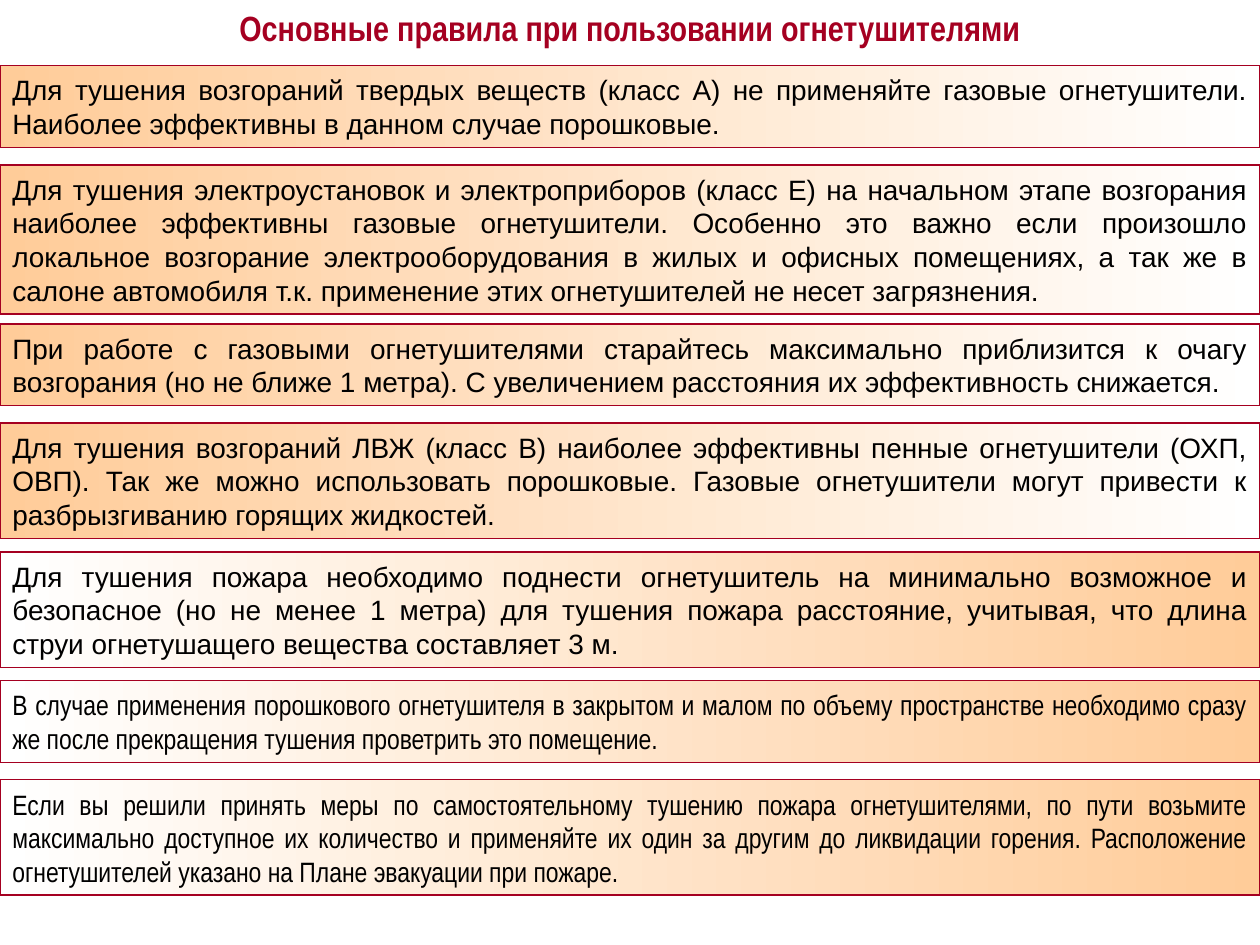
from pptx import Presentation
from pptx.dml.color import RGBColor
from pptx.enum.shapes import MSO_SHAPE as Shape
from pptx.enum.text import MSO_ANCHOR as Anchor, MSO_AUTO_SIZE as Fit, PP_ALIGN as Align
from pptx.util import Cm, Pt

WIDE, HIGH = 25.4, 19.05
RED, PEACH, WHITE, BLACK = "A50021", "FFCC99", "FFFFFF", "000000"
SANS, SLIM = "Arial", "Arial Narrow"
OUT, BACK = (PEACH, WHITE), (WHITE, PEACH)

# Each rule: top in cm, count of lines, gradient, font, wording
RULES = [
    (1.32, 2, OUT, SANS,
     "Для тушения возгораний твердых веществ (класс А) не применяйте газовые "
     "огнетушители. Наиболее эффективны в данном случае порошковые."),
    (3.33, 4, OUT, SANS,
     "Для тушения электроустановок и электроприборов (класс Е) на начальном этапе "
     "возгорания наиболее эффективны газовые огнетушители. Особенно это важно если "
     "произошло локальное возгорание электрооборудования в жилых и офисных "
     "помещениях, а так же в салоне автомобиля т.к. применение этих огнетушителей "
     "не несет загрязнения."),
    (6.53, 2, OUT, SANS,
     "При работе с газовыми огнетушителями старайтесь максимально приблизится к "
     "очагу возгорания (но не ближе 1 метра). С увеличением расстояния их "
     "эффективность снижается."),
    (8.53, 3, OUT, SANS,
     "Для тушения возгораний ЛВЖ (класс В) наиболее эффективны пенные огнетушители "
     "(ОХП, ОВП). Так же можно использовать порошковые. Газовые огнетушители могут "
     "привести к разбрызгиванию горящих жидкостей."),
    (11.13, 3, BACK, SANS,
     "Для тушения пожара необходимо поднести огнетушитель на минимально возможное "
     "и безопасное (но не менее 1 метра) для тушения пожара расстояние, учитывая, "
     "что длина струи огнетушащего вещества составляет 3 м. "),
    (13.72, 2, BACK, SLIM,
     "В случае применения порошкового огнетушителя в закрытом и малом по объему "
     "пространстве необходимо сразу же после прекращения тушения проветрить это "
     "помещение."),
    (15.72, 3, BACK, SLIM,
     "Если вы решили принять меры по самостоятельному тушению пожара "
     "огнетушителями, по пути возьмите максимально доступное их количество и "
     "применяйте их один за другим до ликвидации горения. Расположение "
     "огнетушителей указано на Плане эвакуации при пожаре."),
]


def color(code):
    return RGBColor.from_string(code)


def write(shape, text, face, size, tint, align, bold=False):
    frame = shape.text_frame
    frame.word_wrap = True
    frame.auto_size = Fit.SHAPE_TO_FIT_TEXT
    par = frame.paragraphs[0]
    par.alignment = align
    run = par.add_run()
    run.text = text
    font = run.font
    font.name, font.size, font.bold = face, Pt(size), bold
    font.color.rgb = color(tint)


def add_title(slide, text):
    box = slide.shapes.add_textbox(0, 0, Cm(WIDE), Cm(1.1))
    write(box, text, SLIM, 20, RED, Align.CENTER, bold=True)


def add_rule(slide, top, lines, shade, face, text):
    high = 0.3 + 0.675 * lines
    box = slide.shapes.add_shape(Shape.RECTANGLE, 0, Cm(top), Cm(WIDE), Cm(high))
    box.shadow.inherit = False
    box.fill.gradient()
    box.fill.gradient_angle = 0
    for stop, code in zip(box.fill.gradient_stops, shade):
        stop.color.rgb = color(code)
    box.line.color.rgb = color(RED)
    box.line.width = Pt(0.75)
    box.text_frame.vertical_anchor = Anchor.MIDDLE
    write(box, text, face, 16, BLACK, Align.JUSTIFY)


def main():
    deck = Presentation()
    deck.slide_width, deck.slide_height = Cm(WIDE), Cm(HIGH)
    slide = deck.slides.add_slide(deck.slide_layouts[6])

    # Heading
    add_title(slide, "Основные правила при пользовании огнетушителями")

    # Rules from top to bottom
    for rule in RULES:
        add_rule(slide, *rule)

    deck.save("out.pptx")


if __name__ == "__main__":
    main()
